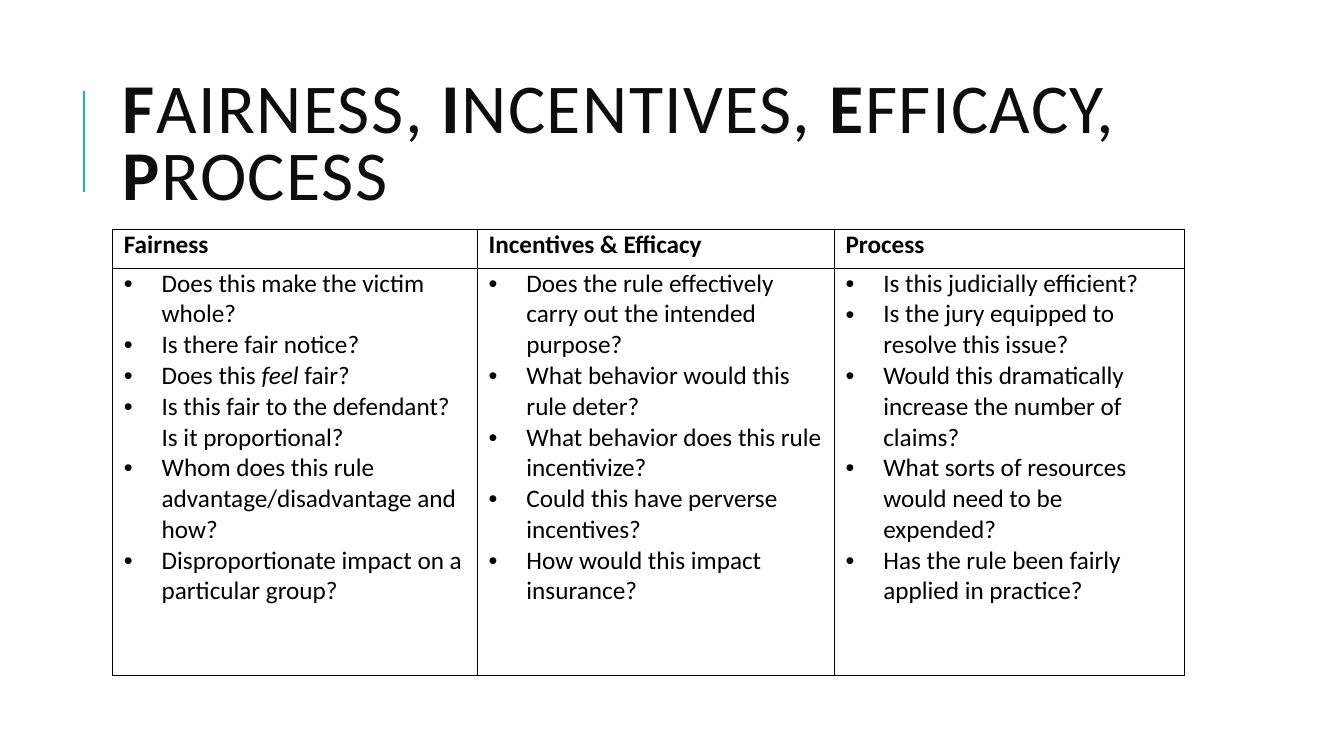
from dataclasses import dataclass

from lxml.etree import SubElement
from pptx import Presentation
from pptx.dml.color import RGBColor as RGB
from pptx.enum.shapes import MSO_CONNECTOR as Connector
from pptx.enum.text import MSO_ANCHOR as Anchor, MSO_AUTO_SIZE as AutoSize, PP_ALIGN as Align
from pptx.oxml import parse_xml
from pptx.oxml.ns import nsdecls, qn
from pptx.slide import Slide
from pptx.table import _Cell as Cell
from pptx.text.text import _Paragraph as Paragraph
from pptx.util import Pt


@dataclass(frozen=True)
class Theme:
    font: str = "Calibri"
    title_size: int = 50
    body_size: int = 18
    title_color: str = "0D0D0D"
    body_color: str = "000000"
    border_color: str = "000000"
    accent: str = "1CADE4"


@dataclass(frozen=True)
class Column:
    heading: str
    width: float
    questions: tuple[str, ...]


THEME = Theme()
TITLE = "*F*AIRNESS, *I*NCENTIVES, *E*FFICACY, *P*ROCESS"
LEFT = 80.6
TABLE_TOP = 164.2
ROW_HEIGHTS = (27.4, 290.9)
INDENT = 27
COLUMNS = (
    Column("Fairness", 260.6, (
        "Does this make the victim whole?",
        "Is there fair notice?",
        "Does this *feel *fair?",
        "Is this fair to the defendant? Is it proportional?",
        "Whom does this rule advantage/disadvantage and how?",
        "Disproportionate impact on a particular group?",
    )),
    Column("Incentives & Efficacy", 254.9, (
        "Does the rule effectively carry out the intended purpose?",
        "What behavior would this rule deter?",
        "What behavior does this rule incentivize?",
        "Could this have perverse incentives?",
        "How would this impact insurance?",
    )),
    Column("Process", 249.8, (
        "Is this judicially efficient?",
        "Is the jury equipped to resolve this issue?",
        "Would this dramatically increase the number of claims?",
        "What sorts of resources would need to be expended?",
        "Has the rule been fairly applied in practice?",
    )),
)


def apply(target: object, values: dict[str, object]) -> None:
    for name, value in values.items():
        setattr(target, name, value)


def add_runs(p: Paragraph, text: str, size: int, color: str, emphasis: str, bold: bool = False) -> None:
    for i, part in enumerate(text.split("*")):
        if not part:
            continue
        r = p.add_run()
        r.text = part
        style = {"name": THEME.font, "size": Pt(size), "bold": bold, "italic": False}
        if i % 2:
            style[emphasis] = True
        apply(r.font, style)
        r.font.color.rgb = RGB.from_string(color)


def add_title(s: Slide) -> None:
    sp = s.shapes.title
    apply(sp, {"left": Pt(LEFT), "top": Pt(46), "width": Pt(765.3), "height": Pt(118)})
    tf = sp.text_frame
    apply(tf, {"word_wrap": True, "auto_size": AutoSize.NONE, "vertical_anchor": Anchor.MIDDLE})
    p = tf.paragraphs[0]
    apply(p, {"alignment": Align.LEFT, "line_spacing": 0.8})
    add_runs(p, TITLE, THEME.title_size, THEME.title_color, "bold")
    for r in p.runs:
        r._r.get_or_add_rPr().set("spc", "100")


def add_accent(s: Slide) -> None:
    line = s.shapes.add_connector(Connector.STRAIGHT, Pt(60), Pt(136.8), Pt(60), Pt(64.8))
    line.line.color.rgb = RGB.from_string(THEME.accent)
    line.line.width = Pt(1.5)
    SubElement(line._element.spPr, qn("a:effectLst"))


def format_cell(cell: Cell) -> None:
    apply(cell, {
        "margin_left": Pt(7.9), "margin_right": Pt(7.9),
        "margin_top": Pt(0), "margin_bottom": Pt(0), "vertical_anchor": Anchor.TOP,
    })
    cell.fill.background()
    tc_pr = cell._tc.get_or_add_tcPr()
    for i, side in enumerate(("lnL", "lnR", "lnT", "lnB")):
        tc_pr.insert(i, parse_xml(
            f'<a:{side} {nsdecls("a")} w="{Pt(1)}"><a:solidFill>'
            f'<a:srgbClr val="{THEME.border_color}"/></a:solidFill></a:{side}>'
        ))


def add_bullet(p: Paragraph) -> None:
    p_pr = p._p.get_or_add_pPr()
    p_pr.set("marL", str(Pt(INDENT)))
    p_pr.set("indent", str(-Pt(INDENT)))
    SubElement(p_pr, qn("a:buFont")).set("typeface", "Arial")
    SubElement(p_pr, qn("a:buChar")).set("char", "•")


def add_questions(s: Slide) -> None:
    width = sum(column.width for column in COLUMNS)
    table = s.shapes.add_table(
        len(ROW_HEIGHTS), len(COLUMNS), Pt(LEFT), Pt(TABLE_TOP), Pt(width), Pt(sum(ROW_HEIGHTS))
    ).table
    apply(table, {"first_row": False, "horz_banding": False})
    for row, height in zip(table.rows, ROW_HEIGHTS):
        row.height = Pt(height)
    for i, column in enumerate(COLUMNS):
        table.columns[i].width = Pt(column.width)
        head, body = table.cell(0, i), table.cell(1, i)
        format_cell(head)
        format_cell(body)
        add_runs(head.text_frame.paragraphs[0], column.heading,
                 THEME.body_size, THEME.body_color, "italic", bold=True)
        tf = body.text_frame
        for j, question in enumerate(column.questions):
            p = tf.add_paragraph() if j else tf.paragraphs[0]
            add_bullet(p)
            add_runs(p, question, THEME.body_size, THEME.body_color, "italic")


def main() -> None:
    prs = Presentation()
    apply(prs, {"slide_width": Pt(960), "slide_height": Pt(540)})
    s = prs.slides.add_slide(prs.slide_layouts.get_by_name("Title Only"))
    add_accent(s)
    add_title(s)
    add_questions(s)
    prs.save("out.pptx")


if __name__ == "__main__":
    main()
